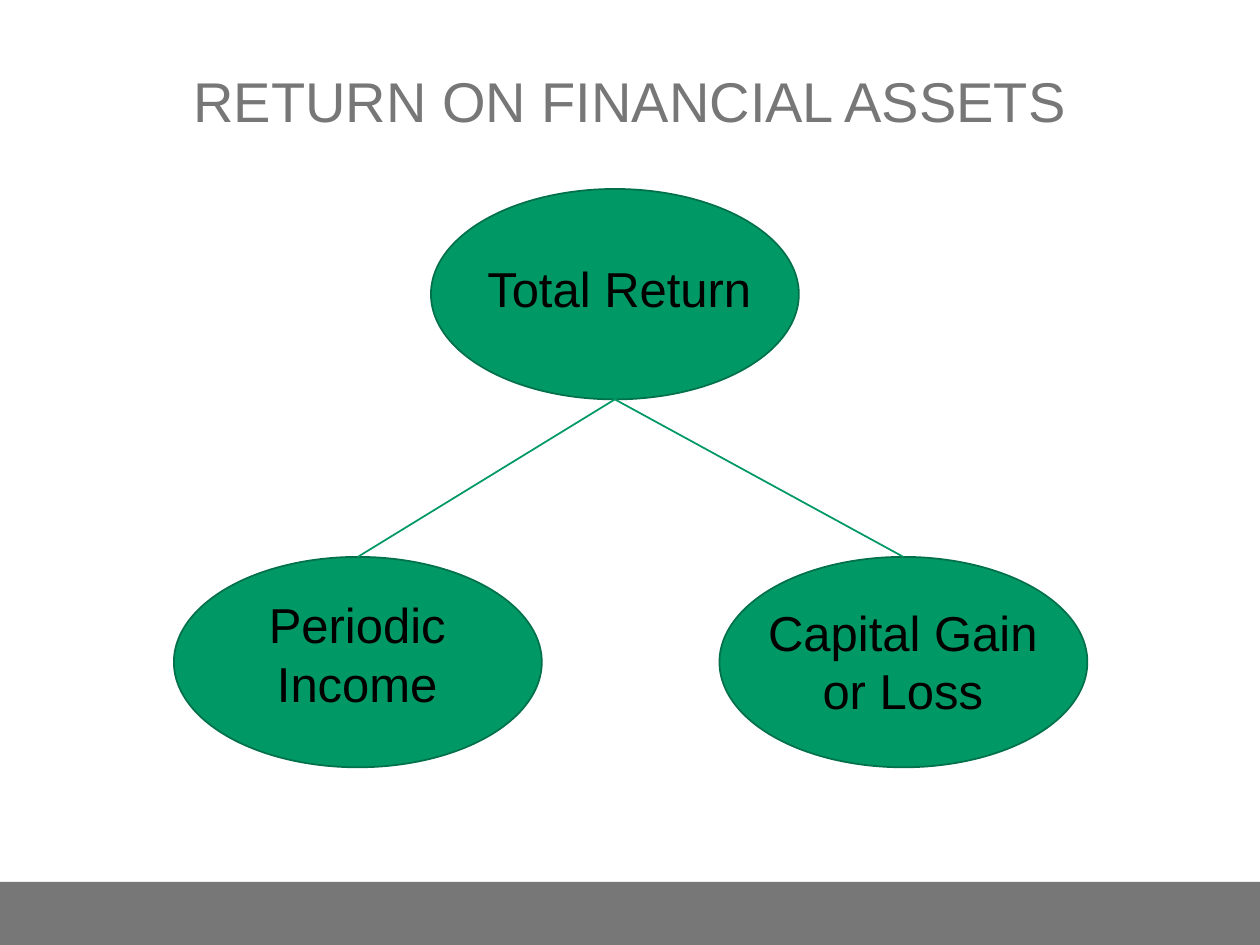
from lxml import etree
from pptx import Presentation
from pptx.dml.color import RGBColor
from pptx.enum.shapes import MSO_CONNECTOR, MSO_SHAPE
from pptx.enum.text import MSO_ANCHOR, PP_ALIGN
from pptx.oxml.ns import qn
from pptx.util import Inches, Pt

STRAIGHT = MSO_CONNECTOR.STRAIGHT
OVAL, RECTANGLE = MSO_SHAPE.OVAL, MSO_SHAPE.RECTANGLE
TOP, MIDDLE = MSO_ANCHOR.TOP, MSO_ANCHOR.MIDDLE
CENTER = PP_ALIGN.CENTER
COLORS = {"gray": "777777", "green": "009966", "edge": "00714B", "black": "000000"}
NODE_WIDTH, NODE_HEIGHT = 2.92, 1.67


def color(name):
    """Return the named colour."""
    return RGBColor.from_string(COLORS[name])


def add_text(page, text, box, size=28, ink="black", anchor=TOP):
    """Add centred, wrapped text in a box of left, top, width, height."""
    frame = page.shapes.add_textbox(*map(Inches, box)).text_frame
    frame.word_wrap = True
    frame.vertical_anchor = anchor
    para = frame.paragraphs[0]
    para.alignment = CENTER
    span = para.add_run()
    span.text = text
    span.font.name = "Arial"
    span.font.size = Pt(size)
    span.font.color.rgb = color(ink)


def add_filled(page, kind, box, fill, edge=None):
    """Add a filled preset shape with an optional outline."""
    shape = page.shapes.add_shape(kind, *map(Inches, box))
    shape.shadow.inherit = False
    shape.fill.solid()
    shape.fill.fore_color.rgb = color(fill)
    if edge:
        shape.line.color.rgb = color(edge)
        shape.line.width = Pt(1)
    else:
        shape.line.fill.background()


def add_node(page, left, top, text, label_box):
    """Add an ellipse with a label placed relative to its corner."""
    add_filled(page, OVAL, (left, top, NODE_WIDTH, NODE_HEIGHT), "green", "edge")
    dx, dy, width, height = label_box
    add_text(page, text, (left + dx, top + dy, width, height))


def add_branch(page, start, end):
    """Add a thin green line between two points."""
    line = page.shapes.add_connector(STRAIGHT, *map(Inches, start + end))
    line.line.color.rgb = color("green")
    line.line.width = Pt(1)
    etree.SubElement(line._element.spPr, qn("a:effectLst"))


def add_tree(page, left, top):
    """Add the total return node, its two parts and their branches."""
    lower = top + 2.92
    root_left, right_left = left + 2.04, left + 4.33
    add_node(page, root_left, top, "Total Return", (0.33, 0.5, 2.33, 0.57))
    add_node(page, left, lower, "Periodic Income", (0.37, 0.25, 2.17, 1.04))
    add_node(page, right_left, lower, "Capital Gain or Loss", (0.12, 0.31, 2.67, 1.04))
    start = (root_left + NODE_WIDTH / 2, top + NODE_HEIGHT)
    for child_left in (left, right_left):
        add_branch(page, start, (child_left + NODE_WIDTH / 2, lower))


def main():
    """Build and save the slide."""
    deck = Presentation()
    deck.slide_width, deck.slide_height = Inches(10), Inches(7.5)
    page = deck.slides.add_slide(deck.slide_layouts[6])
    add_filled(page, RECTANGLE, (0, 7, 10, 0.5), "gray")
    add_text(page, "RETURN ON FINANCIAL ASSETS", (0.42, 0.17, 9.16, 1.25),
             size=32, ink="gray", anchor=MIDDLE)
    add_tree(page, 1.38, 1.5)
    deck.save("out.pptx")


if __name__ == "__main__":
    main()
